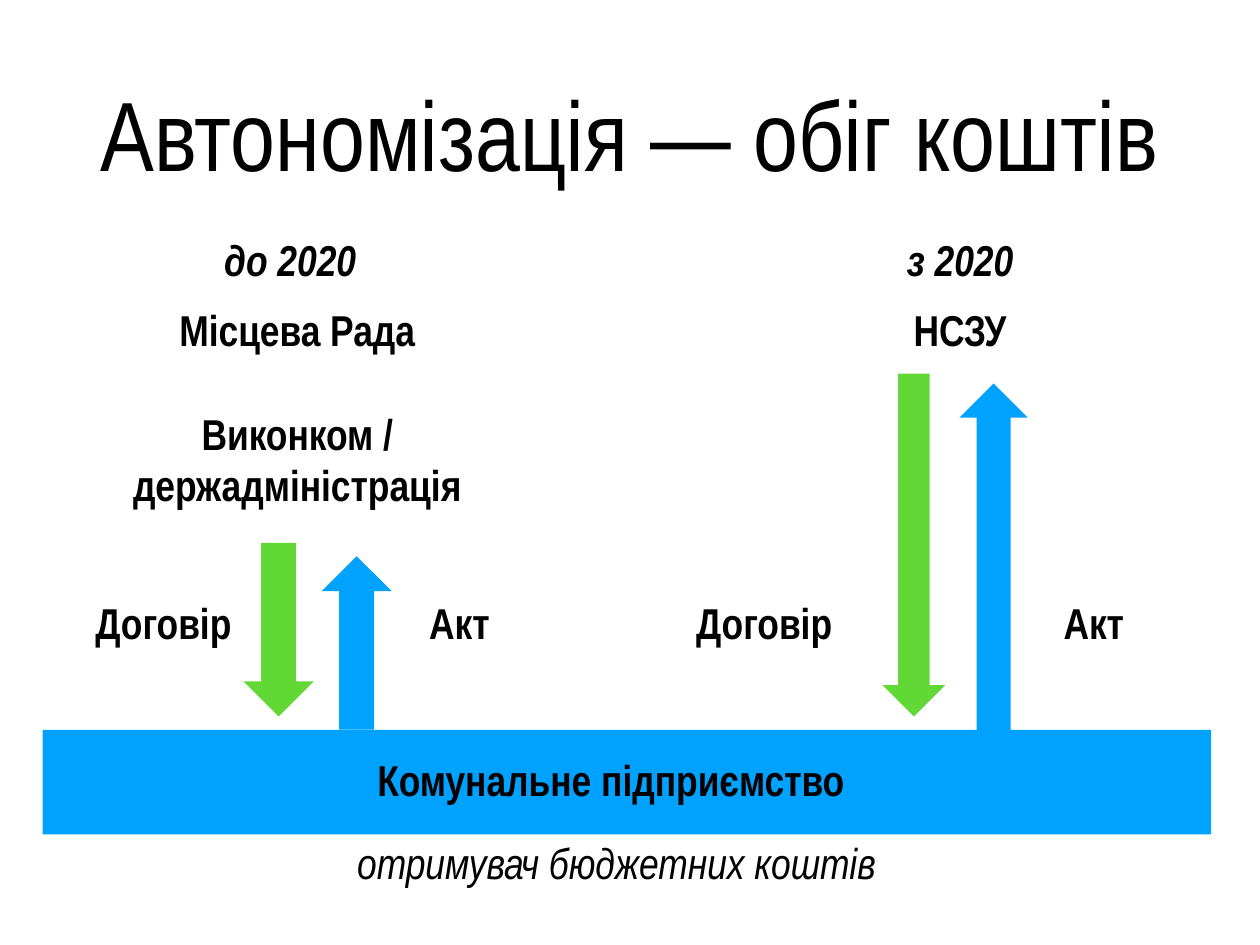
from pptx import Presentation
from pptx.dml.color import RGBColor
from pptx.enum import shapes, text
from pptx.util import Inches, Pt

BLACK = RGBColor(0x00, 0x00, 0x00)
GREEN = RGBColor(0x61, 0xD8, 0x36)
BLUE = RGBColor(0x00, 0xA2, 0xFF)
FONT = "Arial Narrow"
LABEL_SIZE = 35.1
INSET = 0.06
PERIOD_TOP, PAYER_TOP, DOCUMENT_TOP = 2.43, 3.22, 6.43
HEADING_SIZE = (3.37, 1)
DOCUMENT_SIZE = (3.03, 1.19)


def add_label(slide, lines, left, top, width, height,
              size=LABEL_SIZE, bold=True, italic=False):
    """Add centred text with one paragraph per line."""
    box = slide.shapes.add_textbox(Inches(left), Inches(top), Inches(width), Inches(height))
    frame = box.text_frame
    frame.word_wrap = True
    frame.vertical_anchor = text.MSO_ANCHOR.MIDDLE
    frame.margin_left = frame.margin_right = Inches(INSET)
    frame.margin_top = frame.margin_bottom = Inches(INSET)
    frame.text = lines
    for paragraph in frame.paragraphs:
        paragraph.alignment = text.PP_ALIGN.CENTER
        font = paragraph.font
        font.name, font.size = FONT, Pt(size)
        font.bold, font.italic = bold, italic
        font.color.rgb = BLACK


def add_block(slide, kind, color, left, top, width, height):
    """Add a plain filled shape without an outline."""
    shape = slide.shapes.add_shape(
        kind, Inches(left), Inches(top), Inches(width), Inches(height))
    shape.shadow.inherit = False
    shape.fill.solid()
    shape.fill.fore_color.rgb = color
    shape.line.fill.background()


def add_flow(slide, money, report, contract_left, act_left):
    """Add the money and report arrows with their document labels."""
    add_block(slide, shapes.MSO_SHAPE.DOWN_ARROW, GREEN, *money)
    add_block(slide, shapes.MSO_SHAPE.UP_ARROW, BLUE, *report)
    add_label(slide, "Договір", contract_left, DOCUMENT_TOP, *DOCUMENT_SIZE)
    add_label(slide, "Акт", act_left, DOCUMENT_TOP, *DOCUMENT_SIZE)


def main():
    """Build the slide on the flow of funds before and after 2020."""
    presentation = Presentation()
    presentation.slide_width = Inches(14.22)
    presentation.slide_height = Inches(10.67)
    slide = presentation.slides.add_slide(presentation.slide_layouts[6])

    add_label(slide, "Автономізація — обіг коштів", 0.98, 0.19, 12.26, 2.61,
              size=80, bold=False)

    add_label(slide, "до 2020", 1.59, PERIOD_TOP, *HEADING_SIZE, italic=True)
    add_label(slide, "Місцева Рада", 1.67, PAYER_TOP, *HEADING_SIZE)
    add_label(slide, "Виконком /\nдержадміністрація", 0, 4.4, 6.71, 1.56)
    add_flow(slide, (2.75, 6.13, 0.79, 1.96), (3.63, 6.28, 0.79, 1.96), 0.33, 3.67)

    add_label(slide, "з 2020", 9.15, PERIOD_TOP, *HEADING_SIZE, italic=True)
    add_label(slide, "НСЗУ", 9.15, PAYER_TOP, *HEADING_SIZE)
    add_flow(slide, (9.96, 4.22, 0.71, 3.87), (10.83, 4.33, 0.77, 3.92), 7.11, 10.83)

    add_block(slide, shapes.MSO_SHAPE.RECTANGLE, BLUE, 0.48, 8.24, 13.19, 1.18)
    add_label(slide, "Комунальне підприємство", 2.63, 8.34, 8.53, 0.92)
    add_label(slide, "отримувач бюджетних коштів", 3.28, 9.14, 7.36, 1.19,
              bold=False, italic=True)

    presentation.save("out.pptx")


if __name__ == "__main__":
    main()
